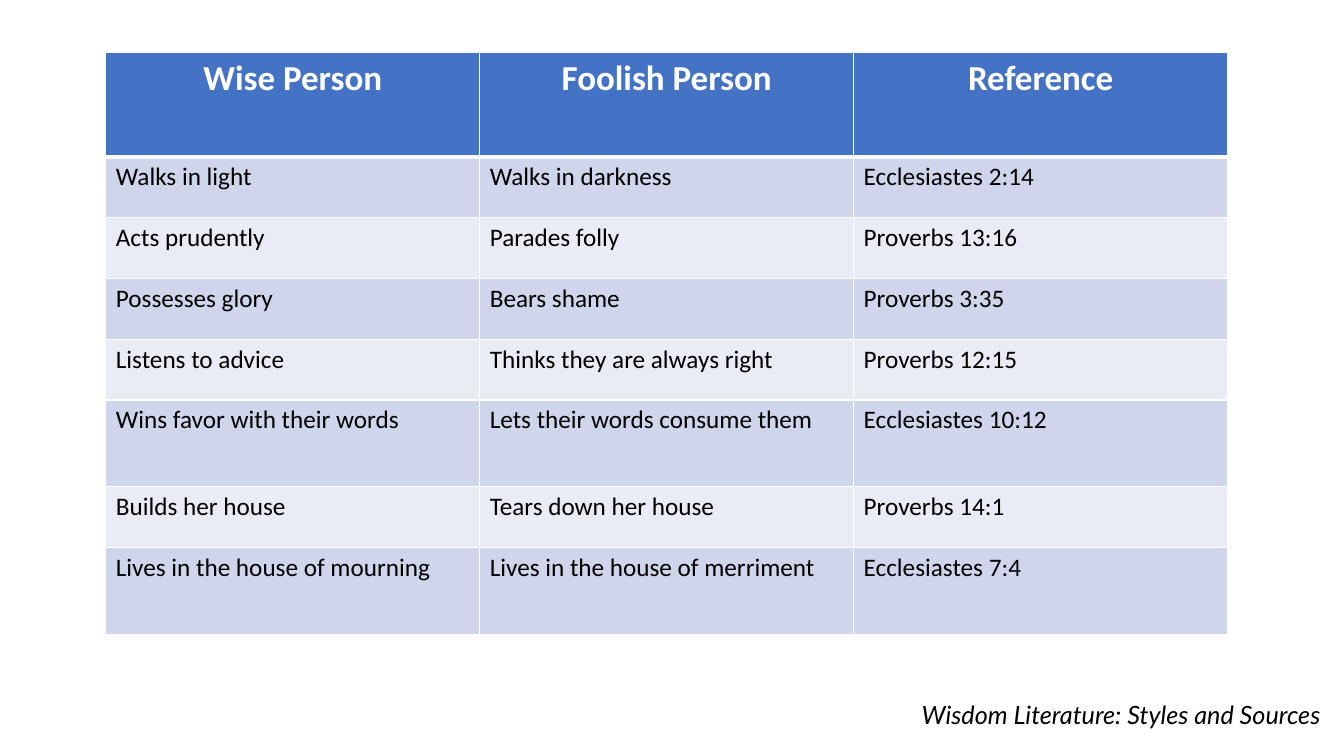
from dataclasses import dataclass

import pptx
import pptx.dml.color
import pptx.enum.text
import pptx.oxml
import pptx.oxml.ns
import pptx.util
from lxml import etree

Pt = pptx.util.Pt
Align = pptx.enum.text.PP_ALIGN
WHITE, BLACK, BLUE = "FFFFFF", "000000", "4472C4"
BANDS = ("CFD5EA", "E9EBF5")
HEAD, LOW, TALL = 74.5, 43.4, 62
WIDTH = 267.1


@dataclass
class Row:
    wise: str
    fool: str
    ref: str
    height: float = LOW


@dataclass
class Style:
    size: float
    color: str
    face: str = "Calibri"
    bold: bool = False
    slant: bool = False
    align: Align = Align.LEFT


TITLE = Style(25, WHITE, bold=True, align=Align.CENTER)
BODY = Style(18, BLACK)
NOTE = Style(18, BLACK, "Lato", slant=True, align=Align.RIGHT)

ROWS = [
    Row("Wise Person", "Foolish Person", "Reference", HEAD),
    Row("Walks in light", "Walks in darkness", "Ecclesiastes 2:14"),
    Row("Acts prudently", "Parades folly", "Proverbs 13:16"),
    Row("Possesses glory", "Bears shame", "Proverbs 3:35"),
    Row("Listens to advice", "Thinks they are always right", "Proverbs 12:15"),
    Row("Wins favor with their words", "Lets their words consume them",
        "Ecclesiastes 10:12", TALL),
    Row("Builds her house", "Tears down her house", "Proverbs 14:1"),
    Row("Lives in the house of mourning", "Lives in the house of merriment",
        "Ecclesiastes 7:4", TALL),
]


def paint(target, color: str) -> None:
    """Set a solid colour on a fill."""
    target.solid()
    target.fore_color.rgb = pptx.dml.color.RGBColor.from_string(color)


def write(frame, text: str, style: Style) -> None:
    line = frame.paragraphs[0]
    line.text = text
    line.alignment = style.align
    font = line.font
    font.name, font.size = style.face, Pt(style.size)
    font.bold, font.italic = style.bold, style.slant
    paint(font.fill, style.color)


def edge(cell, top: float, base: float) -> None:
    """Draw white cell borders; call before the cell is filled."""
    qn = pptx.oxml.ns.qn
    props = cell._tc.get_or_add_tcPr()
    for side, wide in (("L", 1), ("R", 1), ("T", top), ("B", base)):
        line = etree.SubElement(props, qn(f"a:ln{side}"), w=str(Pt(wide)))
        fill = etree.SubElement(line, qn("a:solidFill"))
        etree.SubElement(fill, qn("a:srgbClr"), val=WHITE)


def grid(slide) -> None:
    """Add the comparison table."""
    high = sum(row.height for row in ROWS)
    table = slide.shapes.add_table(
        len(ROWS), 3, Pt(75.6), Pt(37.6), Pt(3 * WIDTH), Pt(high)).table
    for col in table.columns:
        col.width = Pt(WIDTH)
    for i, row in enumerate(ROWS):
        table.rows[i].height = Pt(row.height)
        for j, text in enumerate((row.wise, row.fool, row.ref)):
            cell = table.cell(i, j)
            edge(cell, 3 if i == 1 else 1, 3 if i == 0 else 1)
            paint(cell.fill, BANDS[(i - 1) % 2] if i else BLUE)
            write(cell.text_frame, text, BODY if i else TITLE)


def foot(slide) -> None:
    """Add the source line at the lower right."""
    box = slide.shapes.add_textbox(Pt(372.2), Pt(496), Pt(578.2), Pt(29))
    frame = box.text_frame
    frame.word_wrap = True
    frame.auto_size = pptx.enum.text.MSO_AUTO_SIZE.SHAPE_TO_FIT_TEXT
    write(frame, "Wisdom Literature: Styles and Sources", NOTE)


def main() -> None:
    deck = pptx.Presentation()
    deck.slide_width, deck.slide_height = Pt(960), Pt(540)
    slide = deck.slides.add_slide(deck.slide_layouts[6])
    paint(slide.background.fill, WHITE)
    foot(slide)
    grid(slide)
    deck.save("out.pptx")


if __name__ == "__main__":
    main()
